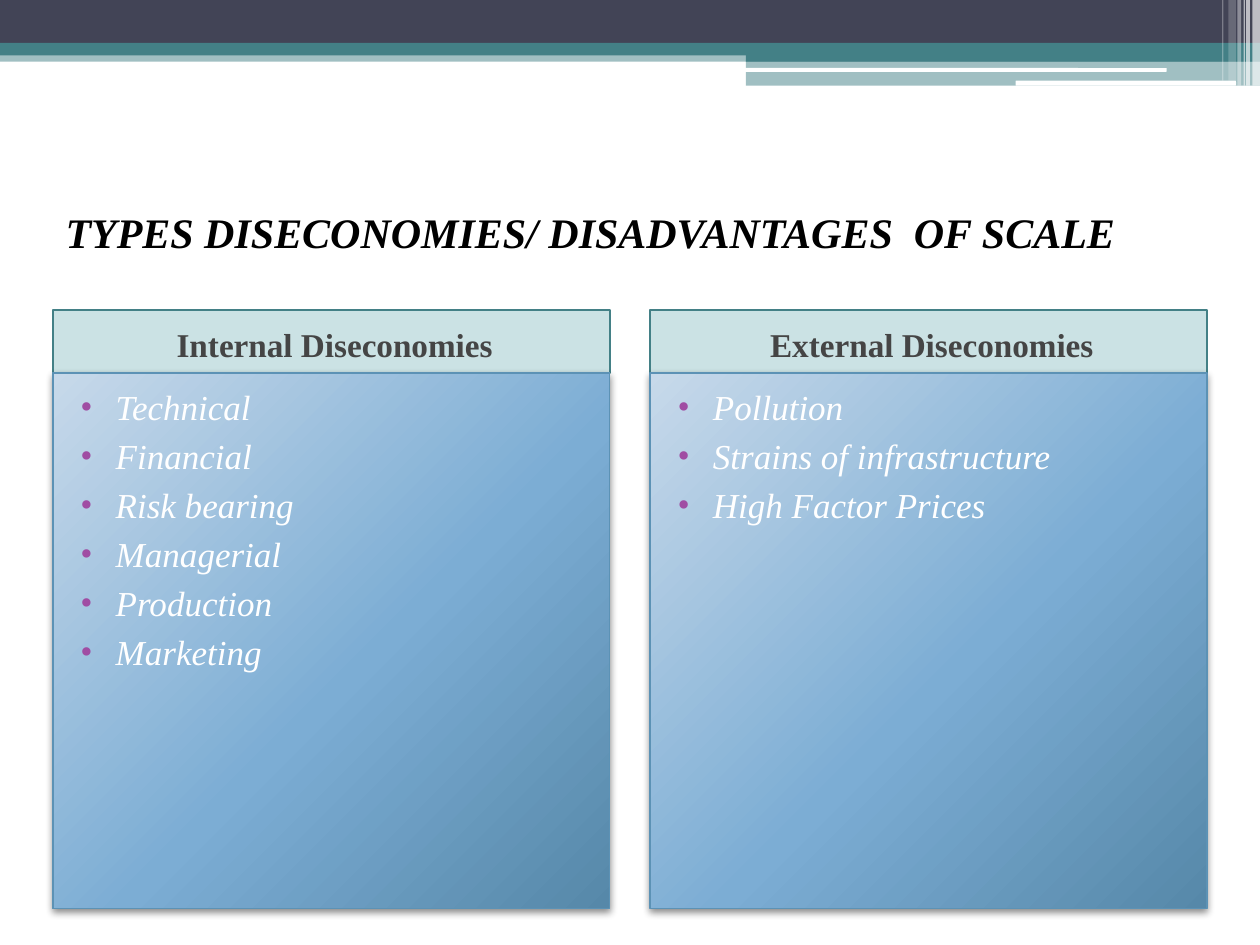
from lxml.etree import SubElement
from pptx import Presentation
from pptx.dml.color import RGBColor
from pptx.enum.shapes import MSO_SHAPE
from pptx.enum.text import MSO_ANCHOR, PP_ALIGN
from pptx.oxml.ns import qn
from pptx.util import Pt

PX = 9144  # EMU per px, 100 px to the inch
HUES = {
    "navy": "424456", "teal": "438086", "white": "FFFFFF", "black": "000000",
    "mint": "328E97", "gray": "454545", "dot": "A04DA3", "edge": "5C92B5",
    "pale": "C7D9EA", "blue": "7CADD4", "deep": "5688A9",
}
STOPS = [(0, "pale"), (55, "blue"), (100, "deep")]
COLS = [
    (42, "Internal Diseconomies",
     ["Technical", "Financial", "Risk bearing", "Managerial", "Production", "Marketing"]),
    (516, "External Diseconomies",
     ["Pollution", "Strains of infrastructure", "High Factor Prices"]),
]
BANDS = [  # left, top, width, height, colour, opacity
    (0, 40, 1000, 9, "teal", 50),
    (0, 0, 1000, 34, "navy", 100),
    (0, 34, 1000, 10, "teal", 100),
    (592, 39, 408, 10, "teal", 100),
    (592, 48, 408, 20, "teal", 50),
]
RULES = [(591, 54, 335, 3), (806, 64, 175, 4)]
STRIPES = [  # left, width, height, opacity
    (994, 6, 68, 65), (989, 3, 68, 65), (987, 1, 68, 60),
    (982, 3, 68, 40), (975, 6, 64, 20), (970, 1, 64, 30),
]


def rgb(name):
    return RGBColor.from_string(HUES[name])


def node(top, tag, **attrs):
    return SubElement(top, qn(tag), {k: str(v) for k, v in attrs.items()})


def write(par, text, size, color, bold=False, italic=False):
    run = par.add_run()
    run.text = text
    font = run.font
    font.name, font.size = "Times New Roman", Pt(size)
    font.bold, font.italic = bold, italic
    font.color.rgb = rgb(color)


def blend(shape):
    """Fill with a circular gradient centred beyond the top left corner."""
    shape.fill.background()
    props = shape._element.spPr
    grad = node(props, "a:gradFill", rotWithShape=1)
    stops = node(grad, "a:gsLst")
    for pos, name in STOPS:
        node(node(stops, "a:gs", pos=pos * 1000), "a:srgbClr", val=HUES[name])
    ring = node(grad, "a:path", path="circle")
    node(ring, "a:fillToRect", l=-40000, t=-90000, r=140000, b=190000)
    props.replace(props.find(qn("a:noFill")), grad)


def shade(shape):
    """Drop a soft shadow straight down."""
    effects = shape._element.spPr.find(qn("a:effectLst"))
    drop = node(effects, "a:outerShdw", blurRad=Pt(4), dist=Pt(2),
                dir=90 * 60000, rotWithShape=0)
    node(node(drop, "a:srgbClr", val=HUES["black"]), "a:alpha", val=45000)


def dot(par):
    props = par._p.get_or_add_pPr()
    props.set("marL", str(40 * PX))
    props.set("indent", str(-28 * PX))
    node(node(props, "a:buClr"), "a:srgbClr", val=HUES["dot"])
    node(props, "a:buFont", typeface="Times New Roman")
    node(props, "a:buChar", char="•")


class Deck:
    def __init__(self):
        self.show = Presentation()
        self.show.slide_width, self.show.slide_height = 1000 * PX, 750 * PX
        self.slide = self.show.slides.add_slide(self.show.slide_layouts[5])

    def box(self, x, y, w, h, fill=None, alpha=100, line=None, width=1,
            kind=MSO_SHAPE.RECTANGLE):
        shape = self.slide.shapes.add_shape(kind, x * PX, y * PX, w * PX, h * PX)
        shape.shadow.inherit = False
        if fill:
            shape.fill.solid()
            shape.fill.fore_color.rgb = rgb(fill)
            if alpha < 100:
                color = shape._element.spPr.find(qn("a:solidFill"))[0]
                node(color, "a:alpha", val=alpha * 1000)
        else:
            blend(shape)
        if line:
            shape.line.color.rgb = rgb(line)
            shape.line.width = Pt(width)
        else:
            shape.line.fill.background()
        return shape

    def title(self, text):
        shape = self.slide.shapes.title
        shape.left, shape.top = 42 * PX, 125 * PX
        shape.width, shape.height = 917 * PX, 117 * PX
        frame = shape.text_frame
        frame.vertical_anchor = MSO_ANCHOR.MIDDLE
        par = frame.paragraphs[0]
        par.alignment = PP_ALIGN.LEFT
        write(par, text, 24, "black", bold=True, italic=True)

    def head(self, x, text):
        shape = self.box(x, 246, 442, 50, "mint", 25, "teal")
        frame = shape.text_frame
        frame.vertical_anchor = MSO_ANCHOR.MIDDLE
        frame.margin_left, frame.margin_top = 15 * PX, 9 * PX
        par = frame.paragraphs[0]
        par.alignment = PP_ALIGN.CENTER
        write(par, text, 19, "gray", bold=True)

    def items(self, x, lines):
        shape = self.box(x, 296, 442, 425, line="edge", width=0.75)
        shade(shape)
        frame = shape.text_frame
        frame.vertical_anchor = MSO_ANCHOR.TOP
        frame.margin_top = 10 * PX
        for i, text in enumerate(lines):
            par = frame.add_paragraph() if i else frame.paragraphs[0]
            par.alignment = PP_ALIGN.LEFT
            if i:
                par.space_before = Pt(4)
            dot(par)
            write(par, text, 20, "white", italic=True)


def main():
    deck = Deck()
    for band in BANDS:
        deck.box(*band)
    for rule in RULES:
        deck.box(*rule, "white", kind=MSO_SHAPE.ROUNDED_RECTANGLE)
    for x, w, h, alpha in STRIPES:
        deck.box(x, 0, w, h, "white", alpha)
    deck.title("TYPES DISECONOMIES/ DISADVANTAGES  OF SCALE")
    for x, name, lines in COLS:
        deck.head(x, name)
        deck.items(x, lines)
    deck.show.save("out.pptx")


if __name__ == "__main__":
    main()
